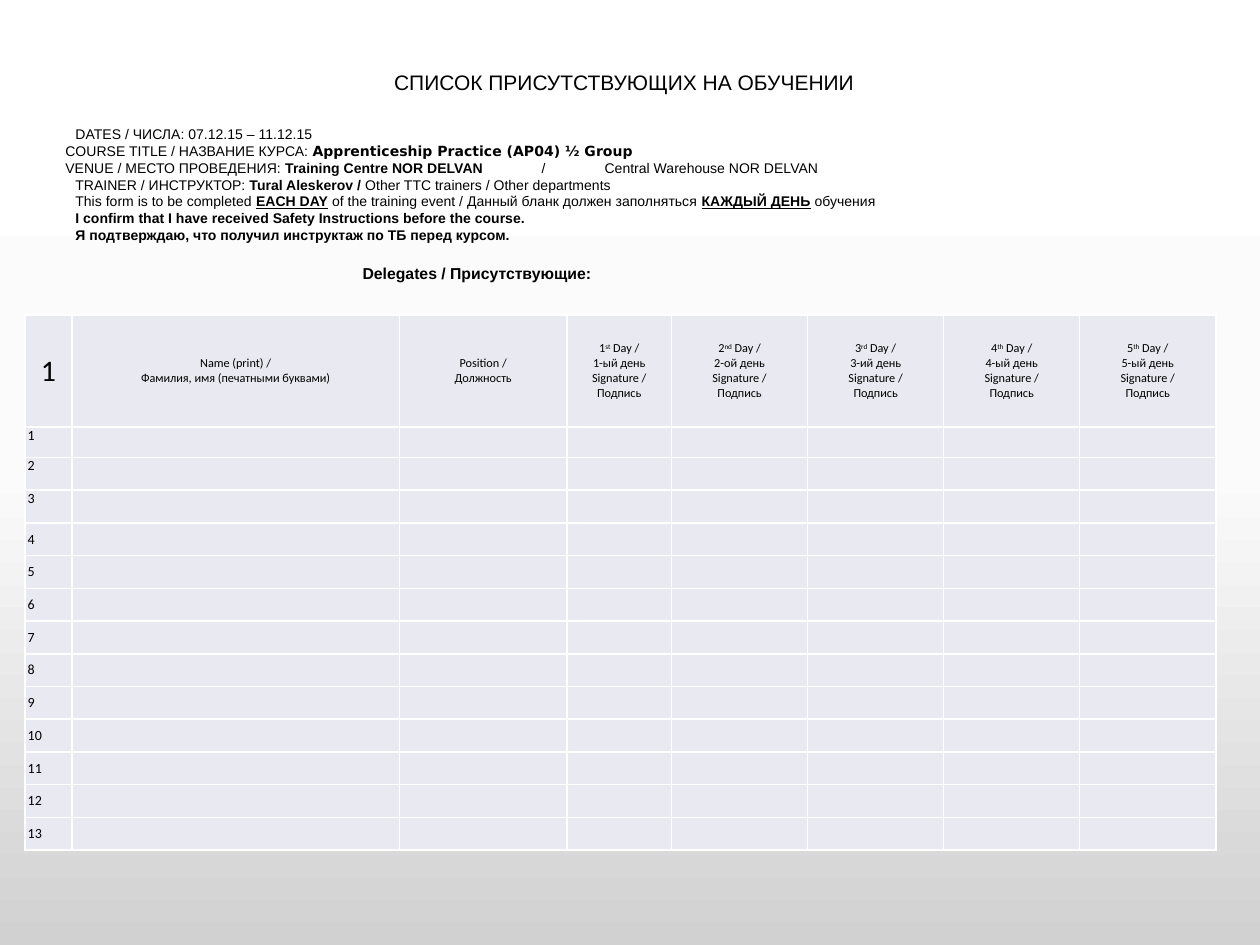
import copy
from dataclasses import dataclass

import pptx
import pptx.util
import pptx.dml.color
import pptx.enum.text
import pptx.oxml
import pptx.oxml.ns
from pptx.util import Inches

ALIGN = pptx.enum.text.PP_ALIGN
ANCHOR = pptx.enum.text.MSO_ANCHOR
BLACK, WHITE, PALE = "000000", "FFFFFF", "E9EAF1"
NS = pptx.oxml.ns.nsdecls("a")


@dataclass
class Span:
    text: str
    bold: bool = False
    under: bool = False
    raised: bool = False
    font: str = "Arial"


@dataclass
class Line:
    spans: list[Span]
    left: float = 0
    first: float = 0
    align: ALIGN = ALIGN.LEFT
    tabs: tuple[float, ...] = ()


@dataclass
class Box:
    left: float
    top: float
    width: float
    height: float
    size: float
    lines: list[Line]
    wrap: bool = True


def color(code: str) -> pptx.dml.color.RGBColor:
    return pptx.dml.color.RGBColor.from_string(code)


def write(par, line: Line, size: float) -> None:
    """Fill a paragraph with formatted runs, indents and tab stops."""
    par.alignment = line.align
    props = par._p.get_or_add_pPr()
    props.set("marL", str(Inches(line.left)))
    props.set("indent", str(Inches(line.first)))
    if line.tabs:
        stops = "".join(f'<a:tab pos="{Inches(t)}" algn="l"/>' for t in line.tabs)
        props.append(pptx.oxml.parse_xml(f"<a:tabLst {NS}>{stops}</a:tabLst>"))
    for span in line.spans:
        run = par.add_run()
        run.text = span.text
        font = run.font
        font.name, font.size = span.font, pptx.util.Pt(size)
        font.bold, font.underline = span.bold, span.under
        font.color.rgb = color(BLACK)
        if span.raised:
            run._r.get_or_add_rPr().set("baseline", "30000")


def fill_text(frame, lines: list[Line], size: float) -> None:
    for i, line in enumerate(lines):
        write(frame.add_paragraph() if i else frame.paragraphs[0], line, size)


def add_box(slide, box: Box) -> None:
    shape = slide.shapes.add_textbox(
        Inches(box.left), Inches(box.top), Inches(box.width), Inches(box.height))
    frame = shape.text_frame
    frame.word_wrap = box.wrap
    frame.auto_size = pptx.enum.text.MSO_AUTO_SIZE.SHAPE_TO_FIT_TEXT
    fill_text(frame, box.lines, box.size)


def style_cell(cell, lines: list[Line], size: float, anchor: ANCHOR) -> None:
    cell.margin_left = cell.margin_right = Inches(0.02)
    cell.margin_top = cell.margin_bottom = 0
    cell.vertical_anchor = anchor
    props = cell._tc.get_or_add_tcPr()
    for side in ("lnL", "lnR", "lnT", "lnB"):
        props.append(pptx.oxml.parse_xml(
            f'<a:{side} {NS} w="{pptx.util.Pt(1)}"><a:solidFill>'
            f'<a:srgbClr val="{WHITE}"/></a:solidFill></a:{side}>'))
    cell.fill.solid()
    cell.fill.fore_color.rgb = color(PALE)
    if lines:
        fill_text(cell.text_frame, lines, size)
    else:  # small end mark, so that an empty cell does not stretch its row
        cell.text_frame.paragraphs[0]._p.append(
            pptx.oxml.parse_xml(f'<a:endParaRPr {NS} sz="{size * 100}"/>'))


def cell_line(*parts: str, align: ALIGN = ALIGN.CENTER) -> Line:
    """Make a table line; every second part is raised."""
    spans = [Span(t, raised=i % 2 == 1, font="Calibri") for i, t in enumerate(parts)]
    return Line(spans, align=align)


def add_list(slide) -> None:
    """Draw the sign-in table."""
    cols = [0.37, 2.6, 1.33, 0.83] + [1.08] * 4
    rows = [0.89, 0.24] + [0.26] * 12
    days = [("st", "ый"), ("nd", "ой"), ("rd", "ий"), ("th", "ый"), ("th", "ый")]
    heads = [
        [cell_line("1")],
        [cell_line("Name (print) /"), cell_line("Фамилия, имя (печатными буквами)")],
        [cell_line("Position /"), cell_line("Должность")],
    ] + [
        [cell_line(str(n), eng, " Day /"), cell_line(f"{n}-{rus} день"),
         cell_line("Signature /"), cell_line("Подпись")]
        for n, (eng, rus) in enumerate(days, 1)
    ]
    table = slide.shapes.add_table(
        len(rows), len(cols), Inches(0.2), Inches(2.5),
        Inches(sum(cols)), Inches(sum(rows))).table
    table.first_row = table.horz_banding = False
    for col, width in zip(table.columns, cols):
        col.width = Inches(width)
    for row, height in zip(table.rows, rows):
        row.height = Inches(height)
    for c, head in enumerate(heads):
        style_cell(table.cell(0, c), head, 7 if c else 17, ANCHOR.MIDDLE)
        for r in range(1, len(rows)):
            lines = [] if c else [cell_line(str(r), align=ALIGN.LEFT)]
            anchor = ANCHOR.TOP if r <= 3 else ANCHOR.MIDDLE
            style_cell(table.cell(r, c), lines, 8, anchor)


def paint_back(slide) -> None:
    fill = slide.background.fill
    fill.gradient()
    fill.gradient_angle = 270
    last = fill.gradient_stops[1]._gs
    last.addprevious(copy.deepcopy(last))
    shades = [(0, WHITE), (0.5, "FBFBFB"), (1, "D1D1D1")]
    for stop, (place, code) in zip(fill.gradient_stops, shades):
        stop.position = place
        stop.color.rgb = color(code)


JUST = ALIGN.JUSTIFY
BOXES = [
    Box(3.03, 0.5, 5, 0.3, 12, [Line([Span("СПИСОК ПРИСУТСТВУЮЩИХ НА ОБУЧЕНИИ")])]),
    Box(0.2, 0.95, 9.45, 1.04, 8, [
        Line([Span("DATES / ЧИСЛА: 07.12.15 – 11.12.15")], 0.3, align=JUST),
        Line([Span("COURSE TITLE / НАЗВАНИЕ КУРСА: "),
              Span("Apprenticeship Practice (AP04) ½ Group", True, font="DejaVu Sans")],
             first=0.22),
        Line([Span("VENUE / МЕСТО ПРОВЕДЕНИЯ: "),
              Span("Training Centre NOR DELVAN", True),
              Span("\t/\tCentral Warehouse NOR DELVAN")],
             first=0.22, tabs=(3.63, 3.79)),
        Line([Span("TRAINER / ИНСТРУКТОР: "), Span("Tural Aleskerov / ", True),
              Span("Other TTC trainers / Other departments")], 0.3, align=JUST),
        Line([Span("This form is to be completed "), Span("EACH DAY", True, True),
              Span(" of the training event / Данный бланк должен заполняться "),
              Span("КАЖДЫЙ ДЕНЬ", True, True), Span(" обучения")], 0.3, align=JUST),
        Line([Span("I confirm that I have received Safety Instructions "
                   "before the course.", True)], 0.3),
        Line([Span("Я подтверждаю, что получил инструктаж по ТБ перед курсом.", True)], 0.3),
    ]),
    Box(2.48, 2.04, 2.33, 0.25, 9,
        [Line([Span("Delegates / Присутствующие:", True)], 0.3)], wrap=False),
]


def main() -> None:
    deck = pptx.Presentation()
    deck.slide_width, deck.slide_height = Inches(10), Inches(7.5)
    slide = deck.slides.add_slide(deck.slide_layouts[6])
    paint_back(slide)
    for box in BOXES:
        add_box(slide, box)
    add_list(slide)
    deck.save("out.pptx")


if __name__ == "__main__":
    main()
